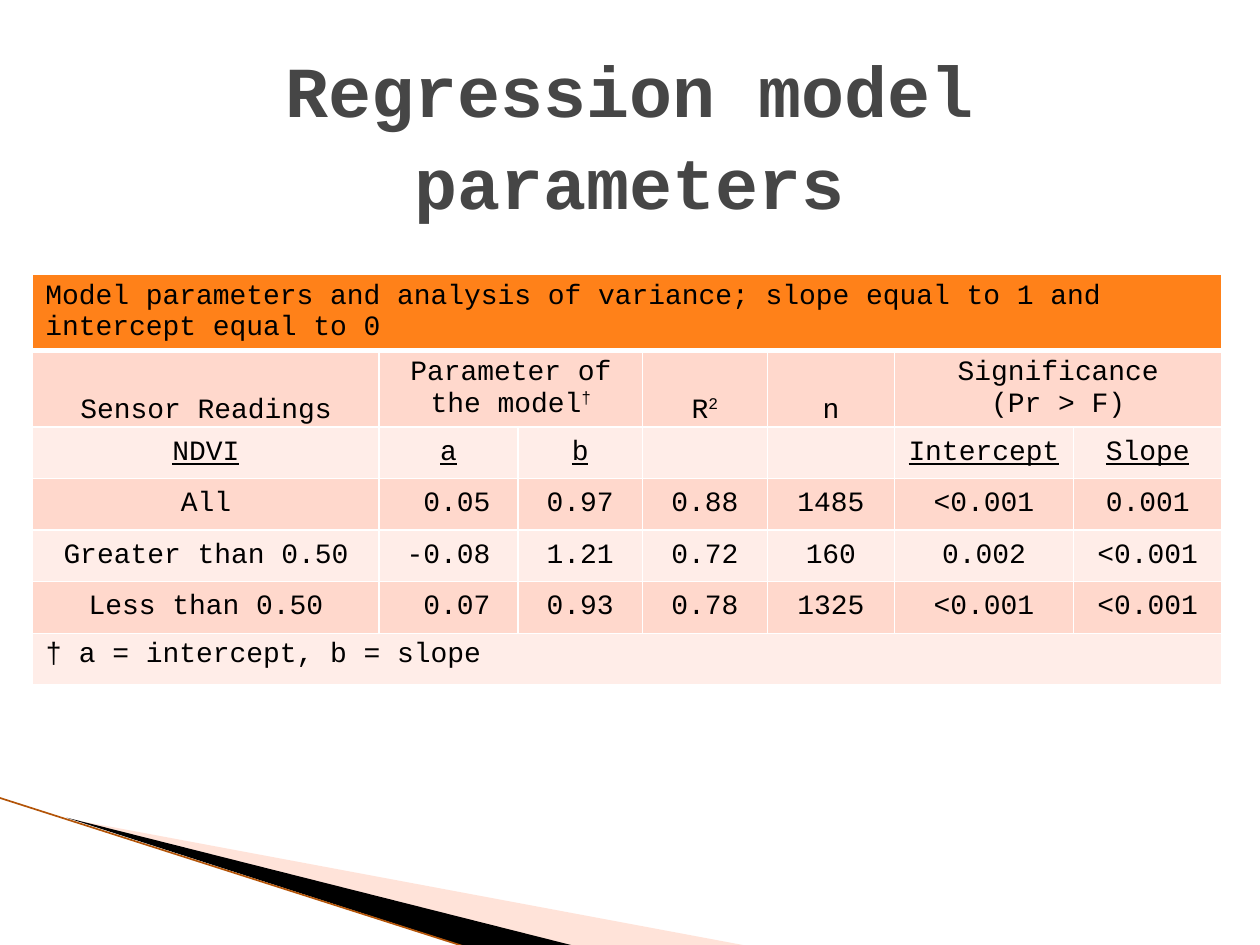
import pptx
import pptx.util
import pptx.dml.color
import pptx.enum.shapes
import pptx.enum.text
import pptx.oxml
import pptx.oxml.ns
from lxml import etree
from pptx.util import Inches

COLORS = {
    "title": "464646", "text": "000000", "header": "FF8119",
    "dark band": "FFD8CC", "light band": "FFEDE8", "border": "FFFFFF",
    "pale wedge": "FFBAA2", "black wedge": "000000", "edge": "B35408",
}
FONT = "Courier New"
CENTER = pptx.enum.text.PP_ALIGN.CENTER
ANCHOR = pptx.enum.text.MSO_ANCHOR


def rgb(name):
    return pptx.dml.color.RGBColor.from_string(COLORS[name])


def add_border(cell, side, points):
    cell._tc.get_or_add_tcPr().append(pptx.oxml.parse_xml(
        f'<a:{side} {pptx.oxml.ns.nsdecls("a")} w="{pptx.util.Pt(points)}"><a:solidFill>'
        f'<a:srgbClr val="{COLORS["border"]}"/></a:solidFill></a:{side}>'))


prs = pptx.Presentation()
prs.slide_width, prs.slide_height = Inches(10), Inches(7.5)
slide = prs.slides.add_slide(prs.slide_layouts[5])

# Wedges in the lower left corner
wedges = {
    "pale wedge": [(0.55, 6.5), (5.95, 7.51), (4.56, 7.51)],
    "black wedge": [(0.53, 6.49), (4.57, 7.51), (3.72, 7.52)],
}
for name, corners in wedges.items():
    points = [(Inches(x), Inches(y)) for x, y in corners]
    builder = slide.shapes.build_freeform(*points[0])
    builder.add_line_segments(points[1:])
    wedge = builder.convert_to_shape()
    wedge.shadow.inherit = False
    wedge.fill.solid()
    wedge.fill.fore_color.rgb = rgb(name)
    wedge.line.fill.background()
    if name == "pale wedge":
        color = wedge._element.spPr.find(".//" + pptx.oxml.ns.qn("a:srgbClr"))
        etree.SubElement(color, pptx.oxml.ns.qn("a:alpha"), val="40000")

edge = slide.shapes.add_connector(
    pptx.enum.shapes.MSO_CONNECTOR.STRAIGHT,
    Inches(-0.01), Inches(6.33), Inches(3.71), Inches(7.52))
edge.line.color.rgb = rgb("edge")
edge.line.width = pptx.util.Pt(0.95)
etree.SubElement(edge._element.spPr, pptx.oxml.ns.qn("a:effectLst"))

title = slide.shapes.title
title.left, title.top = Inches(0.5), Inches(0.42)
title.width, title.height = Inches(9), Inches(1.25)
title.text_frame.text = "Regression model parameters"
title.text_frame.word_wrap = True
title.text_frame.vertical_anchor = ANCHOR.MIDDLE
heading = title.text_frame.paragraphs[0]
heading.alignment = CENTER
heading.line_spacing = 1.07
heading.font.name = FONT
heading.font.size = pptx.util.Pt(41)
heading.font.bold = True
heading.font.color.rgb = rgb("title")

# Each cell is its text, or its text and a superscript
rows = [
    ["Model parameters and analysis of variance; slope equal to 1 and intercept equal to 0"]
    + [""] * 6,
    ["Sensor Readings", ("Parameter of the model", "†"), "", ("R", "2"), "n",
     "Significance\v(Pr > F)", ""],
    ["NDVI", "a", "b", "", "", "Intercept", "Slope"],
    ["All", " 0.05", "0.97", "0.88", "1485", "<0.001", "0.001"],
    ["Greater than 0.50", "-0.08", "1.21", "0.72", "160", "0.002", "<0.001"],
    ["Less than 0.50", " 0.07", "0.93", "0.78", "1325", "<0.001", "<0.001"],
    ["† a = intercept, b = slope"] + [""] * 6,
]
column_widths = [2.75, 1.1, 0.99, 0.99, 1.01, 1.42, 1.18]
merges = [(0, 0, 6), (1, 1, 2), (1, 5, 6), (6, 0, 6)]  # row, first and last column

table = slide.shapes.add_table(
    len(rows), len(column_widths),
    Inches(0.26), Inches(2.18), Inches(9.42), Inches(2.88)).table
table.first_row = table.horz_banding = False
for column, width in zip(table.columns, column_widths):
    column.width = Inches(width)
for row in table.rows:
    row.height = Inches(0.41)
table.rows[1].height = Inches(0.42)
for row, first, last in merges:
    table.cell(row, first).merge(table.cell(row, last))
merged_starts = [(row, first) for row, first, last in merges]

for r, row in enumerate(rows):
    full_width = r in (0, len(rows) - 1)
    band = "header" if r == 0 else "dark band" if r % 2 else "light band"
    for c, content in enumerate(row):
        cell = table.cell(r, c)
        for side in ("lnL", "lnR", "lnT", "lnB"):
            under_header = (r, side) in ((0, "lnB"), (1, "lnT"))
            add_border(cell, side, 3 if under_header else 1)
        cell.fill.solid()
        cell.fill.fore_color.rgb = rgb(band)
        if not content:
            continue
        text, superscript = content if isinstance(content, tuple) else (content, "")
        paragraph = cell.text_frame.paragraphs[0]
        paragraph.text = text
        if superscript:
            raised = paragraph.add_run()
            raised.text = superscript
            raised.font._element.set("baseline", "30000")
        paragraph.font.name = FONT
        paragraph.font.size = pptx.util.Pt(16)
        paragraph.font.color.rgb = rgb("text")
        if r == 2:
            paragraph.font.underline = True
        if not full_width:
            paragraph.alignment = CENTER
            cell.vertical_anchor = ANCHOR.BOTTOM if r == 1 else ANCHOR.MIDDLE
        if (r, c) not in merged_starts:
            cell.margin_left = cell.margin_right = Inches(0.07)
            cell.margin_top = cell.margin_bottom = 0

prs.save("out.pptx")
